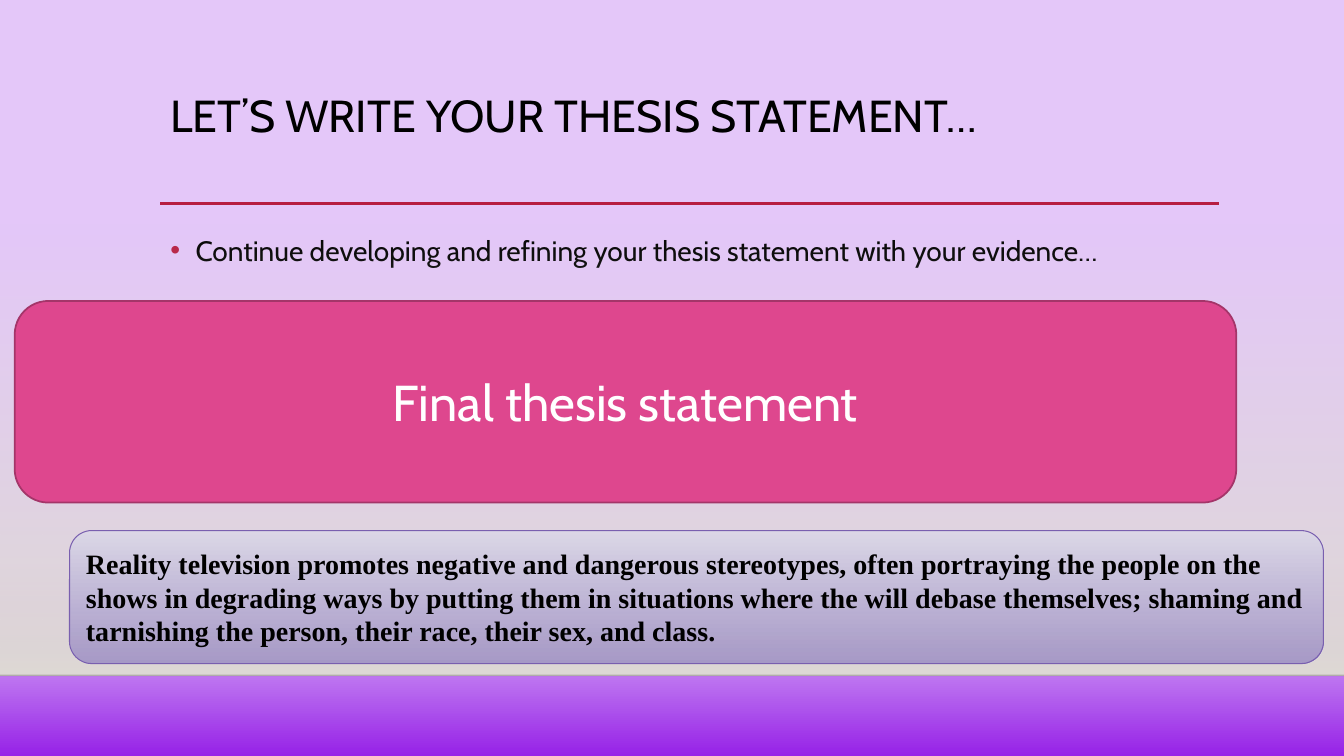
import pptx
import pptx.dml.color
import pptx.enum.shapes
import pptx.enum.text
import pptx.oxml.ns
import pptx.util
from lxml import etree

Pt = pptx.util.Pt
qn = pptx.oxml.ns.qn
ALIGN = pptx.enum.text.PP_ALIGN
ANCHOR = pptx.enum.text.MSO_ANCHOR
WIDTH, HEIGHT = 960, 540
BAND_TOP = 482.4
RULE_TOP = 145.4


def color(hex_text):
    return pptx.dml.color.RGBColor.from_string(hex_text)


def add_alpha(color_element, percent):
    etree.SubElement(color_element, qn("a:alpha"), val=str(percent * 1000))


def fill_gradient(fill, owner, stops):
    """Fill from top to bottom with (position, colour, opacity) stops, in percent."""
    fill.gradient()
    fill.gradient_angle = 270
    stop_list = next(owner.iter(qn("a:gsLst")))
    for stop in list(stop_list):
        stop_list.remove(stop)
    for position, hex_text, opacity in stops:
        stop = etree.SubElement(stop_list, qn("a:gs"), pos=str(position * 1000))
        stop_color = etree.SubElement(stop, qn("a:srgbClr"), val=hex_text)
        if opacity < 100:
            add_alpha(stop_color, opacity)


def add_shape(slide, kind, box):
    shape = slide.shapes.add_shape(kind, *[Pt(length) for length in box])
    shape.shadow.inherit = False
    return shape


def add_rule(slide, left, right, top, hex_text, weight):
    rule = slide.shapes.add_connector(
        pptx.enum.shapes.MSO_CONNECTOR.STRAIGHT, Pt(left), Pt(top), Pt(right), Pt(top))
    rule.line.color.rgb = color(hex_text)
    rule.line.width = Pt(weight)
    etree.SubElement(rule.element.spPr, qn("a:effectLst"))
    return rule


def write_text(shape, text, size, font="Cabin", hex_text="000000", bold=False,
               align=ALIGN.LEFT, anchor=ANCHOR.MIDDLE):
    frame = shape.text_frame
    frame.text = text
    frame.word_wrap = True
    frame.auto_size = pptx.enum.text.MSO_AUTO_SIZE.NONE
    frame.vertical_anchor = anchor
    para = frame.paragraphs[0]
    para.alignment = align
    para.space_before = Pt(0)
    for span in para.runs:
        span.font.name = font
        span.font.size = Pt(size)
        span.font.bold = bold
        span.font.color.rgb = color(hex_text)
    return para


def place(shape, box):
    shape.left, shape.top, shape.width, shape.height = [Pt(length) for length in box]


def add_backdrop(slide):
    fill_gradient(slide.background.fill, slide.element,
                  [(0, "E4C7F9", 100), (74, "E4C7F9", 100),
                   (83, "D7AAF6", 100), (100, "9622E7", 100)])
    haze_top = 159
    haze = add_shape(slide, pptx.enum.shapes.MSO_SHAPE.RECTANGLE,
                     (0, haze_top, WIDTH, BAND_TOP - haze_top))
    fill_gradient(haze.fill, haze.element, [(0, "DFDBD5", 0), (100, "DFDBD5", 100)])
    haze.line.fill.background()
    edge = add_rule(slide, 0, WIDTH, BAND_TOP, "000001", 1)
    add_alpha(next(edge.element.spPr.iter(qn("a:srgbClr"))), 20)


def add_heading(slide, box):
    left, top, width, height = box
    add_rule(slide, left, left + width, RULE_TOP, "B71E42", 2.5)
    title = slide.shapes.title
    place(title, box)
    para = write_text(title, "LET’S WRITE YOUR THESIS STATEMENT…", 32, anchor=ANCHOR.TOP)
    para.line_spacing = 0.9


def add_instruction(slide, box):
    body = slide.placeholders[1]
    place(body, box)
    para = write_text(
        body, "Continue developing and refining your thesis statement with your evidence…",
        20, anchor=ANCHOR.TOP)
    para.line_spacing = 1.2
    properties = para._p.get_or_add_pPr()
    properties.set("marL", str(Pt(18)))
    properties.set("indent", str(Pt(-18)))
    bullet_color = etree.SubElement(properties, qn("a:buClr"))
    etree.SubElement(bullet_color, qn("a:srgbClr"), val="B71E42")
    etree.SubElement(properties, qn("a:buFont"), typeface="Arial")
    etree.SubElement(properties, qn("a:buChar"), char="•")


def add_panel(slide, box, line_color, line_weight):
    panel = add_shape(slide, pptx.enum.shapes.MSO_SHAPE.ROUNDED_RECTANGLE, box)
    panel.line.color.rgb = color(line_color)
    panel.line.width = Pt(line_weight)
    return panel


def add_banner(slide, box):
    banner = add_panel(slide, box, "A43569", 1.25)
    banner.fill.solid()
    banner.fill.fore_color.rgb = color("DE478E")
    write_text(banner, "Final thesis statement", 36, hex_text="FFFFFF", align=ALIGN.CENTER)


def add_thesis(slide, box):
    thesis = add_panel(slide, box, "795FAF", 0.75)
    fill_gradient(thesis.fill, thesis.element, [(0, "DCD8E8", 100), (100, "A395C6", 92)])
    write_text(
        thesis,
        "Reality television promotes negative and dangerous stereotypes, often portraying "
        "the people on the shows in degrading ways by putting them in situations where the "
        "will debase themselves; shaming and tarnishing the person, their race, their sex, "
        "and class.",
        20, font="Times New Roman", bold=True)


def main():
    deck = pptx.Presentation()
    deck.slide_width, deck.slide_height = Pt(WIDTH), Pt(HEIGHT)
    slide = deck.slides.add_slide(deck.slide_layouts[1])
    add_backdrop(slide)
    add_heading(slide, (114.5, 63.4, 756, 82.8))
    add_instruction(slide, (114.5, 158.4, 756, 271.4))
    add_banner(slide, (10.5, 215, 872.6, 144))
    add_thesis(slide, (49.7, 379, 895.7, 95))
    deck.save("out.pptx")


if __name__ == "__main__":
    main()
